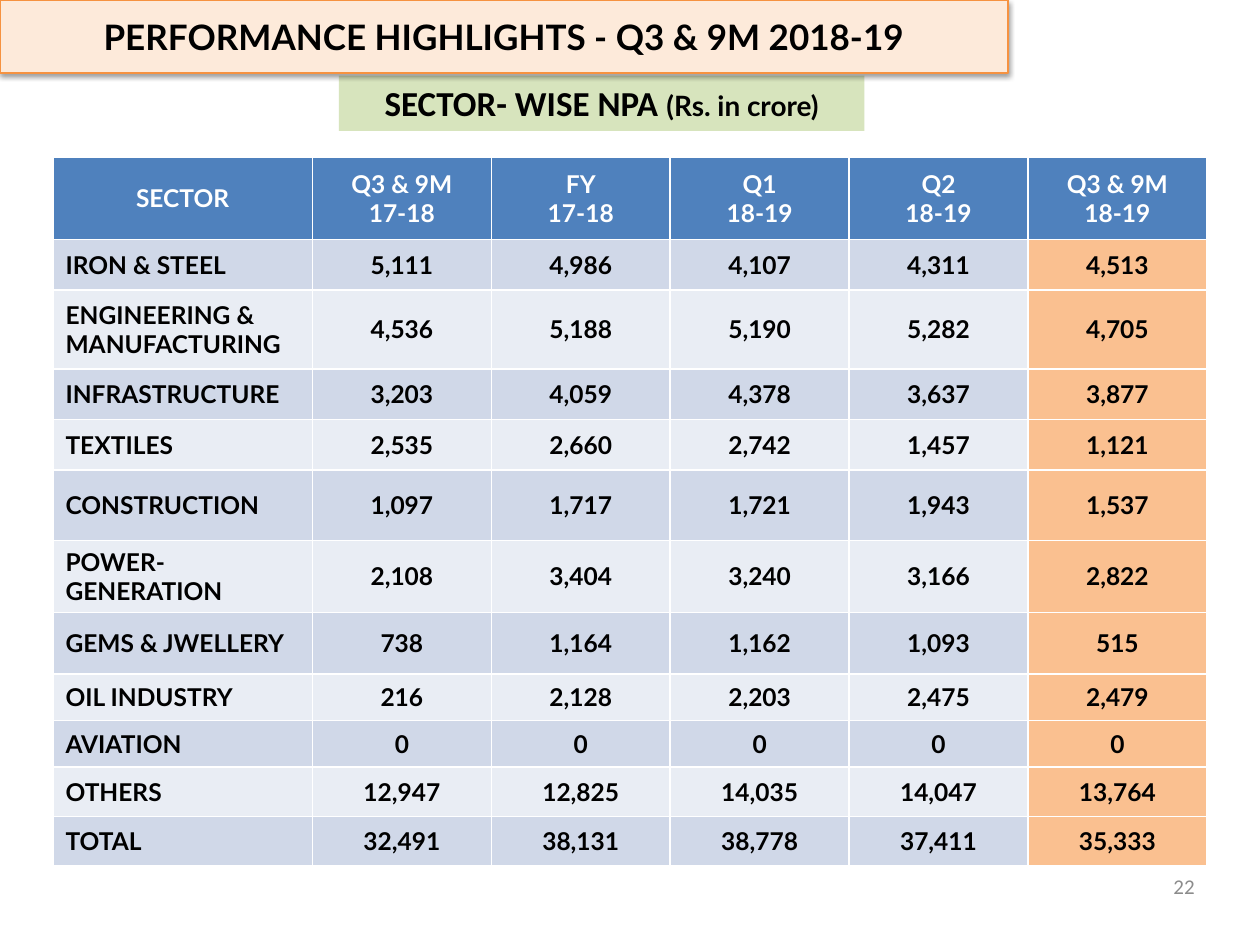
from lxml import etree
from pptx import Presentation
from pptx.dml.color import RGBColor
from pptx.enum.shapes import MSO_SHAPE
from pptx.enum.text import MSO_ANCHOR, PP_ALIGN
from pptx.oxml import parse_xml
from pptx.oxml.ns import nsdecls, qn
from pptx.util import Inches, Pt

LEFT, CENTER, RIGHT = PP_ALIGN.LEFT, PP_ALIGN.CENTER, PP_ALIGN.RIGHT
TOP, MIDDLE = MSO_ANCHOR.TOP, MSO_ANCHOR.MIDDLE
RECT = MSO_SHAPE.RECTANGLE

COLORS = {
    "text": "000000", "white": "FFFFFF", "page": "8C8C8C",
    "title": "FDEADA", "title_line": "F69240", "subtitle": "D7E4BD",
    "header": "4F81BD", "odd": "D0D8E8", "even": "E9EDF4", "latest": "FAC090",
}

TITLE = "PERFORMANCE HIGHLIGHTS - Q3 & 9M 2018-19"
SUBTITLE, UNIT = "SECTOR- WISE NPA ", "(Rs. in crore)"
PAGE = "22"
HEADER = ["SECTOR", "Q3 & 9M\n17-18", "FY\n17-18", "Q1\n18-19", "Q2\n18-19",
          "Q3 & 9M\n18-19"]
SECTORS = [
    ("IRON & STEEL", "5,111", "4,986", "4,107", "4,311", "4,513"),
    ("ENGINEERING & MANUFACTURING", "4,536", "5,188", "5,190", "5,282", "4,705"),
    ("INFRASTRUCTURE", "3,203", "4,059", "4,378", "3,637", "3,877"),
    ("TEXTILES", "2,535", "2,660", "2,742", "1,457", "1,121"),
    ("CONSTRUCTION", "1,097", "1,717", "1,721", "1,943", "1,537"),
    ("POWER-GENERATION", "2,108", "3,404", "3,240", "3,166", "2,822"),
    ("GEMS & JWELLERY", "738", "1,164", "1,162", "1,093", "515"),
    ("OIL INDUSTRY", "216", "2,128", "2,203", "2,475", "2,479"),
    ("AVIATION", "0", "0", "0", "0", "0"),
    ("OTHERS", "12,947", "12,825", "14,035", "14,047", "13,764"),
    ("TOTAL", "32,491", "38,131", "38,778", "37,411", "35,333"),
]
COL_WIDTHS = [2.06] + [1.42] * 5
ROW_HEIGHTS = [0.65, 0.4, 0.63, 0.4, 0.4, 0.56, 0.57, 0.49, 0.37, 0.37, 0.39, 0.39]


def rgb(name):
    return RGBColor.from_string(COLORS[name])


def fill(target, color):
    target.fill.solid()
    target.fill.fore_color.rgb = rgb(color)


def add_run(p, text, size=14, font="Lato", color="text", bold=True):
    r = p.add_run()
    r.text = text
    r.font.size, r.font.name, r.font.bold = Pt(size), font, bold
    r.font.color.rgb = rgb(color)


def write(tf, text, align=CENTER, anchor=MIDDLE, **style):
    """Write one paragraph per line of text."""
    tf.word_wrap = True
    tf.vertical_anchor = anchor
    for i, line in enumerate(text.split("\n")):
        p = tf.add_paragraph() if i else tf.paragraphs[0]
        p.alignment = align
        add_run(p, line, **style)


def add_borders(cell, color="white", width=1):
    tcPr = cell._tc.get_or_add_tcPr()
    for side in ("a:lnL", "a:lnR", "a:lnT", "a:lnB"):
        ln = etree.SubElement(tcPr, qn(side), w=str(Pt(width)))
        solid = etree.SubElement(ln, qn("a:solidFill"))
        etree.SubElement(solid, qn("a:srgbClr"), val=COLORS[color])


def add_shadow(shape):
    shape.element.spPr.append(parse_xml(
        f'<a:effectLst {nsdecls("a")}><a:outerShdw blurRad="{Pt(3.1)}" '
        f'dist="{Pt(1.6)}" dir="5400000" rotWithShape="0"><a:srgbClr val="000000">'
        '<a:alpha val="38000"/></a:srgbClr></a:outerShdw></a:effectLst>'))


def add_title(s):
    title = s.shapes.title
    title.left, title.top = 0, 0
    title.width, title.height = Inches(8), Inches(0.58)
    fill(title, "title")
    title.line.color.rgb = rgb("title_line")
    title.line.width = Pt(0.75)
    add_shadow(title)
    write(title.text_frame, TITLE, size=20)
    # In front of the subtitle, so that the shadow falls on it
    title.element.getparent().append(title.element)


def add_subtitle(s):
    sp = s.shapes.add_shape(RECT, Inches(2.69), Inches(0.6), Inches(4.17), Inches(0.44))
    sp.shadow.inherit = False
    fill(sp, "subtitle")
    sp.line.fill.background()
    write(sp.text_frame, SUBTITLE, anchor=TOP, size=20, font="Calibri")
    add_run(sp.text_frame.paragraphs[0], UNIT, size=16)


def add_sector_table(s):
    rows = [HEADER] + SECTORS
    table = s.shapes.add_table(
        len(rows), len(HEADER), Inches(0.42), Inches(1.25),
        Inches(sum(COL_WIDTHS)), Inches(sum(ROW_HEIGHTS))).table
    for column, width in zip(table.columns, COL_WIDTHS):
        column.width = Inches(width)
    for row, height in zip(table.rows, ROW_HEIGHTS):
        row.height = Inches(height)
    for i, row in enumerate(rows):
        for j, text in enumerate(row):
            cell = table.cell(i, j)
            add_borders(cell)
            if i == 0:
                back = "header"
            elif j == len(row) - 1:
                back = "latest"
            else:
                back = "odd" if i % 2 else "even"
            fill(cell, back)
            write(cell.text_frame, text, align=LEFT if i and j == 0 else CENTER,
                  color="text" if i else "white")
            cell.vertical_anchor = MIDDLE


def add_page_number(s):
    box = s.shapes.add_textbox(Inches(7.25), Inches(6.83), Inches(2.33), Inches(0.4))
    write(box.text_frame, PAGE, align=RIGHT, size=12, font="Calibri",
          color="page", bold=False)


def main():
    prs = Presentation()
    prs.slide_width, prs.slide_height = Inches(10), Inches(7.5)
    s = prs.slides.add_slide(prs.slide_layouts[5])
    add_subtitle(s)
    add_page_number(s)
    add_title(s)
    add_sector_table(s)
    prs.save("out.pptx")


if __name__ == "__main__":
    main()
